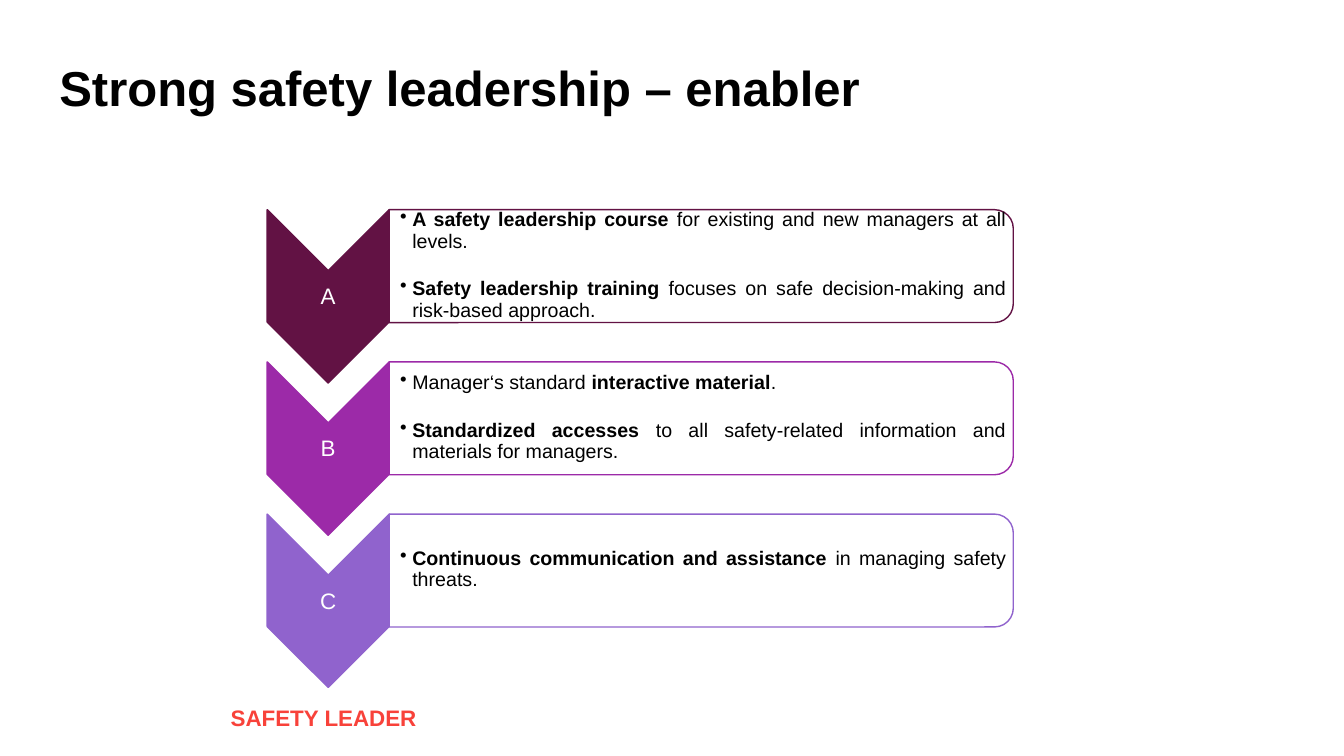
import pptx
import pptx.dml.color
import pptx.enum.shapes
import pptx.enum.text
import pptx.oxml
import pptx.util
from pptx.util import Inches

SHAPES = pptx.enum.shapes.MSO_SHAPE
ALIGN = pptx.enum.text.PP_ALIGN
ANCHOR = pptx.enum.text.MSO_ANCHOR
NAMESPACE = "http://schemas.openxmlformats.org/drawingml/2006/main"

STEPS = [
    ("A", "621244", [
        [("A safety leadership course ", True),
         ("for existing and new managers at all levels.", False)],
        [("Safety leadership training ", True),
         ("focuses on safe decision-making and risk-based approach.", False)],
    ]),
    ("B", "9C2AA8", [
        [("Manager‘s standard ", False), ("interactive material", True), (".", False)],
        [("Standardized accesses ", True),
         ("to all safety-related information and materials for managers.", False)],
    ]),
    ("C", "9063CD", [
        [("Continuous communication and assistance ", True),
         ("in managing safety threats.", False)],
    ]),
]


def color(value):
    return pptx.dml.color.RGBColor.from_string(value)


def add_bullet(para):
    properties = para._p.get_or_add_pPr()
    properties.set("marL", str(Inches(0.12)))
    properties.set("indent", str(-Inches(0.12)))
    properties.append(pptx.oxml.parse_xml(f'<a:buChar xmlns:a="{NAMESPACE}" char="•"/>'))


def add_text(page, left, top, width, height, paragraphs, size=14, ink="000000",
             align=ALIGN.LEFT, anchor=ANCHOR.TOP, insets=(0.1, 0.05, 0.1, 0.05),
             line_spacing=0.9, gap=0, bullets=False):
    box = page.shapes.add_textbox(Inches(left), Inches(top), Inches(width), Inches(height))
    frame = box.text_frame
    frame.word_wrap = True
    frame.vertical_anchor = anchor
    (frame.margin_left, frame.margin_top,
     frame.margin_right, frame.margin_bottom) = map(Inches, insets)
    for index, spans in enumerate(paragraphs):
        para = frame.add_paragraph() if index else frame.paragraphs[0]
        para.alignment = align
        para.line_spacing = line_spacing
        if index:
            para.space_before = pptx.util.Pt(gap)
        if bullets:
            add_bullet(para)
        for text, bold in spans:
            span = para.add_run()
            span.text = text
            span.font.name = "Arial"
            span.font.size = pptx.util.Pt(size)
            span.font.bold = bold
            span.font.color.rgb = color(ink)


def add_turned_shape(page, kind, left, top, width, height, fill, line):
    shape = page.shapes.add_shape(
        kind, Inches(left + (width - height) / 2), Inches(top + (height - width) / 2),
        Inches(height), Inches(width))
    shape.rotation = 90
    shape.shadow.inherit = False
    shape.fill.solid()
    shape.fill.fore_color.rgb = color(fill)
    shape.line.color.rgb = color(line)
    shape.line.width = pptx.util.Pt(1)


def add_step(page, left, top, letter, shade, points):
    arrow_width, panel_width, panel_height = 1.21, 6.19, 1.12
    panel_left = left + arrow_width
    add_turned_shape(page, SHAPES.CHEVRON, left, top, arrow_width, 1.72, shade, shade)
    add_text(page, left, top + 0.61, arrow_width, 0.52, [[(letter, False)]], size=16,
             ink="FFFFFF", align=ALIGN.CENTER, anchor=ANCHOR.MIDDLE, insets=[0.01] * 4)
    add_turned_shape(page, SHAPES.ROUND_2_SAME_RECTANGLE, panel_left, top,
                     panel_width, panel_height, "FFFFFF", shade)
    add_text(page, panel_left, top + 0.05, 6.13, 1.01, points, align=ALIGN.JUSTIFY,
             anchor=ANCHOR.MIDDLE, insets=(0.11, 0.01, 0.01, 0.01), gap=19, bullets=True)


def add_steps(page, left, top, pitch):
    for index, (letter, shade, points) in enumerate(STEPS):
        add_step(page, left, top + index * pitch, letter, shade, points)


def main():
    deck = pptx.Presentation()
    deck.slide_width, deck.slide_height = Inches(13.33), Inches(7.5)
    page = deck.slides.add_slide(deck.slide_layouts[6])
    add_text(page, 0.49, 0.59, 11.54, 0.7,
             [[("Strong safety leadership – enabler", True)]], size=35)
    add_steps(page, 2.65, 2.08, 1.51)
    add_text(page, 1.99, 6.94, 2.44, 0.37, [[("SAFETY LEADER", True)]], size=16,
             ink="F8423A", align=ALIGN.CENTER, line_spacing=pptx.util.Pt(19))
    deck.save("out.pptx")


if __name__ == "__main__":
    main()
